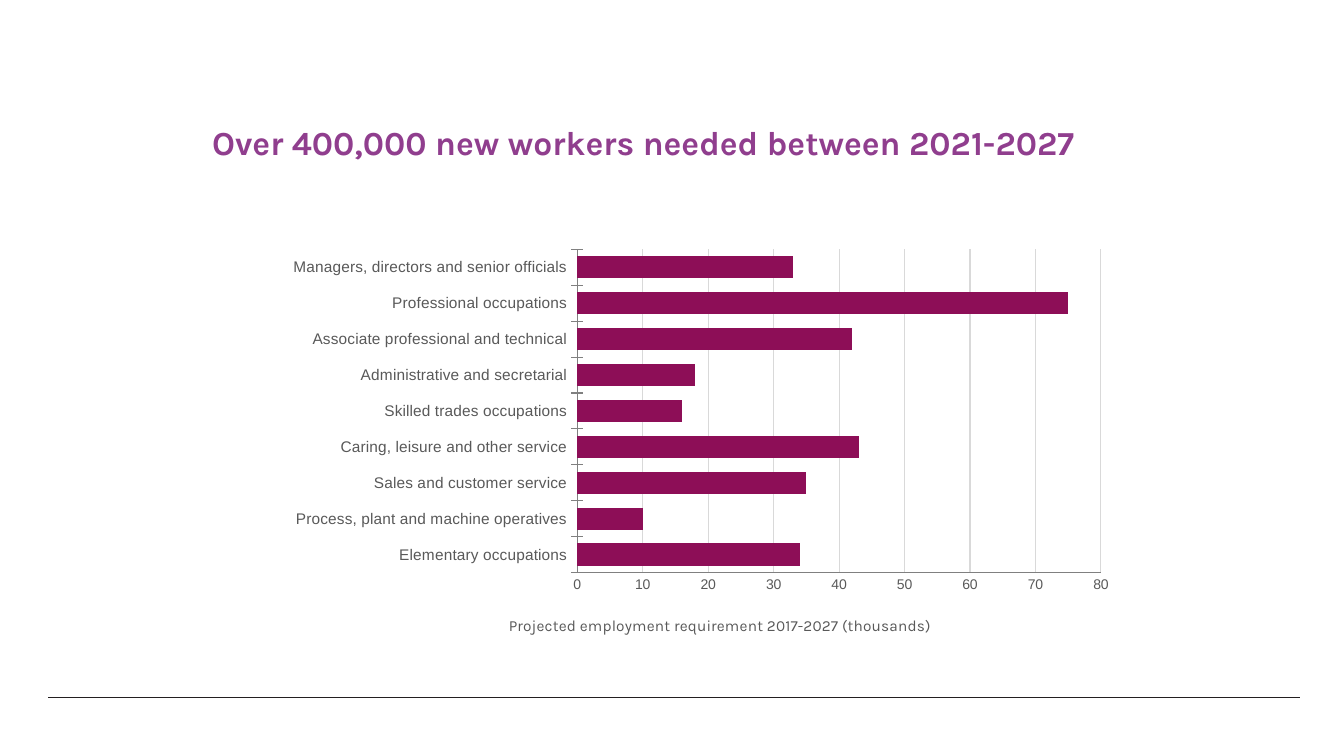
from dataclasses import dataclass

from lxml.etree import SubElement
from pptx import Presentation
from pptx.chart.data import CategoryChartData
from pptx.dml.color import RGBColor
from pptx.enum.chart import XL_CHART_TYPE, XL_TICK_MARK
from pptx.enum.shapes import MSO_CONNECTOR
from pptx.enum.text import MSO_ANCHOR, MSO_AUTO_SIZE, PP_ALIGN
from pptx.oxml import parse_xml
from pptx.oxml.ns import nsdecls, qn
from pptx.util import Inches, Pt


@dataclass(frozen=True)
class Theme:
    """Colours, fonts and type sizes of the slide."""
    heading: RGBColor = RGBColor(0x90, 0x3E, 0x8E)
    bar: RGBColor = RGBColor(0x8D, 0x0E, 0x57)
    label: RGBColor = RGBColor(0x59, 0x59, 0x59)
    axis: RGBColor = RGBColor(0x80, 0x80, 0x80)
    grid: RGBColor = RGBColor(0xD9, 0xD9, 0xD9)
    rule: RGBColor = RGBColor(0x23, 0x1F, 0x20)
    heading_font: str = "Karla"
    label_font: str = "Arial"
    heading_size: Pt = Pt(24)
    label_size: Pt = Pt(11)
    number_size: Pt = Pt(10)


THEME = Theme()

WORKERS_NEEDED = {
    "Elementary occupations": 34,
    "Process, plant and machine operatives": 10,
    "Sales and customer service": 35,
    "Caring, leisure and other service": 43,
    "Skilled trades occupations": 16,
    "Administrative and secretarial": 18,
    "Associate professional and technical": 42,
    "Professional occupations": 75,
    "Managers, directors and senior officials": 33,
}


def style_font(font, name, size, color, bold=False):
    """Set typeface, size, colour and weight."""
    font.name = name
    font.size = size
    font.bold = bold
    font.color.rgb = color


def style_line(line, color, width):
    """Set the colour and width of a line."""
    line.color.rgb = color
    line.width = width


def add_title(slide, text):
    """Place and format the slide title."""
    title = slide.shapes.title
    title.left, title.top = Inches(0.4), Inches(0.84)
    title.width, title.height = Inches(11.96), Inches(1.18)
    frame = title.text_frame
    frame.word_wrap = True
    frame.auto_size = MSO_AUTO_SIZE.NONE
    frame.vertical_anchor = MSO_ANCHOR.MIDDLE
    frame.margin_left = frame.margin_right = Inches(0.16)
    frame.margin_top = frame.margin_bottom = Inches(0.16)
    paragraph = frame.paragraphs[0]
    paragraph.alignment = PP_ALIGN.CENTER
    paragraph.line_spacing = 0.9
    run = paragraph.add_run()
    run.text = text
    style_font(run.font, THEME.heading_font, THEME.heading_size,
               THEME.heading, bold=True)


def add_footer_rule(slide):
    """Draw the thin line across the foot of the slide."""
    rule = slide.shapes.add_connector(
        MSO_CONNECTOR.STRAIGHT,
        Inches(0.48), Inches(6.92), Inches(12.89), Inches(6.92))
    style_line(rule.line, THEME.rule, Pt(0.5))
    SubElement(rule._element.spPr, qn("a:effectLst"))


def set_layout(element, position, **settings):
    """Give a chart part a manual layout at a child position."""
    for existing in element.findall(qn("c:layout")):
        element.remove(existing)
    entries = "".join(f'<c:{name} val="{value}"/>'
                      for name, value in settings.items())
    element.insert(position, parse_xml(
        f'<c:layout {nsdecls("c")}><c:manualLayout>{entries}'
        '</c:manualLayout></c:layout>'))


def style_axis(axis, tick_mark, size):
    """Format an axis line, its ticks and its labels."""
    axis.major_tick_mark = tick_mark
    axis.minor_tick_mark = XL_TICK_MARK.NONE
    style_line(axis.format.line, THEME.axis, Pt(0.75))
    style_font(axis.tick_labels.font, THEME.label_font, size, THEME.label)


def style_value_axis(axis, text):
    """Set the scale, gridlines and title of the value axis."""
    style_axis(axis, XL_TICK_MARK.NONE, THEME.number_size)
    axis.minimum_scale, axis.maximum_scale, axis.major_unit = 0, 80, 10
    axis.has_major_gridlines = True
    style_line(axis.major_gridlines.format.line, THEME.grid, Pt(0.75))
    axis.tick_labels.number_format = "#,##0"
    axis.tick_labels.number_format_is_linked = False
    run = axis.axis_title.text_frame.paragraphs[0].add_run()
    run.text = text
    style_font(run.font, THEME.heading_font, THEME.label_size, THEME.label)
    set_layout(axis.axis_title._element, 1,
               xMode="edge", yMode="edge", x=0.36, y=0.88)


def add_workers_chart(slide):
    """Add the bar chart of workers needed by occupation."""
    data = CategoryChartData(number_format="#,##0")
    data.categories = list(WORKERS_NEEDED)
    data.add_series("Series 1", list(WORKERS_NEEDED.values()))
    chart = slide.shapes.add_chart(
        XL_CHART_TYPE.BAR_CLUSTERED, Inches(1.53), Inches(2.27),
        Inches(9.69), Inches(4.32), data).chart
    chart.has_legend = False
    chart.has_title = False
    style_font(chart.font, THEME.label_font, THEME.number_size, THEME.label)
    plot = chart.plots[0]
    plot.gap_width = 60
    plot.vary_by_categories = False
    fill = plot.series[0].format.fill
    fill.solid()
    fill.fore_color.rgb = THEME.bar
    style_axis(chart.category_axis, XL_TICK_MARK.CROSS, THEME.label_size)
    style_value_axis(chart.value_axis,
                     "Projected employment requirement 2017-2027 (thousands)")
    set_layout(chart._chartSpace.chart.plotArea, 0, layoutTarget="inner",
               xMode="edge", yMode="edge", x=0.433, y=0.047, w=0.536, h=0.743)


def main():
    """Build the slide and save it."""
    presentation = Presentation()
    presentation.slide_width = Inches(13.33)
    presentation.slide_height = Inches(7.5)
    slide = presentation.slides.add_slide(presentation.slide_layouts[5])
    add_footer_rule(slide)
    add_workers_chart(slide)
    add_title(slide, "Over 400,000 new workers needed between 2021-2027")
    presentation.save("out.pptx")


if __name__ == "__main__":
    main()
